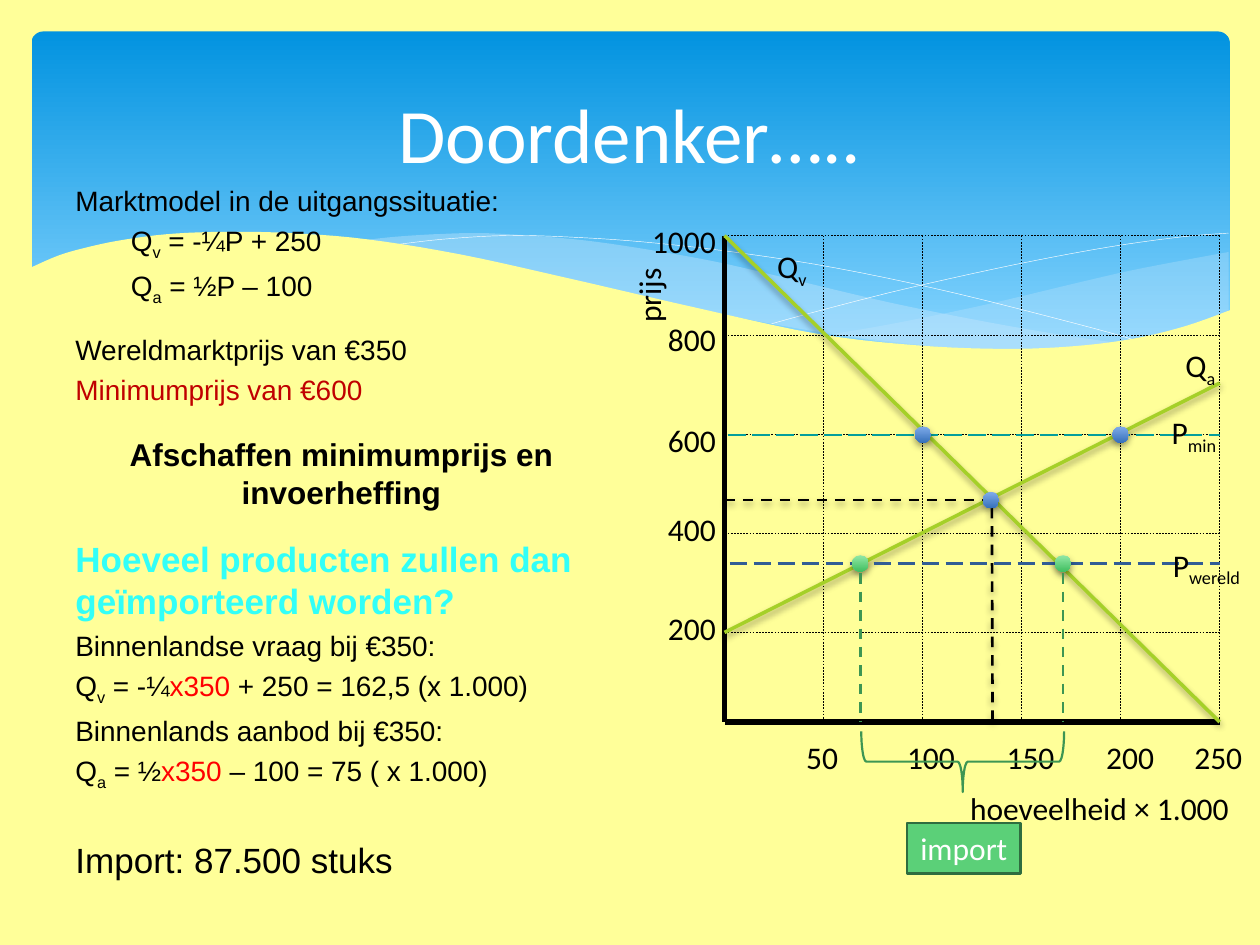
from lxml import etree
from pptx import Presentation, util as u
from pptx.dml.color import RGBColor
from pptx.enum import dml, shapes as sh, text as tx
from pptx.oxml.ns import qn

Pt = u.Pt
PAPER = RGBColor(0xFF, 0xFF, 0x99)
WHITE = RGBColor(0xFF, 0xFF, 0xFF)
BLACK = RGBColor(0, 0, 0)
DARK_RED = RGBColor(0xC0, 0, 0)
RED = RGBColor(0xFF, 0, 0)
CYAN = RGBColor(0x32, 0xFF, 0xF8)
MIST = RGBColor(0xC6, 0xE7, 0xFC)
SKY = (RGBColor(0x02, 0x93, 0xE0), RGBColor(0x83, 0xD3, 0xFE))
BLUE_DOT = (RGBColor(0x80, 0xAC, 0xEA), RGBColor(0x35, 0x70, 0xBA))
GREEN_DOT = (RGBColor(0x92, 0xE8, 0xA6), RGBColor(0x41, 0xBF, 0x60))
LIME = RGBColor(0xA5, 0xD0, 0x28)
TEAL = RGBColor(0x04, 0x9E, 0x9B)
NAVY = RGBColor(0x31, 0x5D, 0x95)
GREEN = RGBColor(0x3D, 0x96, 0x53)
IMPORT_FILL = RGBColor(0x5B, 0xD0, 0x78)
IMPORT_EDGE = RGBColor(0x2F, 0x6D, 0x3F)
DASH, LONG_DASH = dml.MSO_LINE.DASH, dml.MSO_LINE.LONG_DASH

# Graph frame and the prices and crossings marked in it
LEFT, RIGHT, TOP, BOTTOM = 414, 697, 134.6, 412.6
STEP_X, STEP_Y = 56.6, 56.7
MIN_Y, WORLD_Y = 248.4, 322
BALANCE = (566.3, 285.8)
SUPPLY_X, DEMAND_X = 491.6, 607.5

# Wave outlines
RIGHT_WAVE = [(702, 144), (652, 153.4), (620, 160.6), (561, 174.6), (508, 185.4), (476, 190.8)]
RIGHT_WAVE_BACK = [(476, 190.8), (527, 197.3), (561, 199.4), (592, 199.4), (621, 197.4),
                   (646, 194.4), (668, 190.8), (683, 185.4), (702, 177.8)]
MIDDLE_WAVE = [(643, 196.6), (603, 190.8), (558, 182.9), (508, 172.8), (453, 159.8),
               (410, 149.8), (370, 142.6), (335, 137.5), (302, 134.6), (274, 133.2),
               (248, 133.9), (225, 135.4), (206, 137.5)]
MIDDLE_WAVE_BACK = [(206, 137.5), (246, 143.3), (291, 151.9), (323, 159.8), (382, 172.8),
                    (433, 183.6), (479, 191.5), (520, 197.3), (557, 199.6), (589, 200.2),
                    (617, 199.4), (643, 196.6)]
FRONT_WAVE = [(703.4, 177.1), (677, 186.5), (647, 193.7), (612, 198), (572, 199.4),
              (523, 197.3), (467, 190.8), (400, 176.4), (322, 158.4), (263, 145.4),
              (210, 136.8), (166, 133.2), (127, 132.5), (95, 133.9), (68, 137.5),
              (48, 141.8), (33, 146.2), (16.6, 153.4)]
FALLING_THREAD = [(222, 140.4), (252, 136.8), (289, 134.6), (324, 135.4), (367, 138.2),
                  (419, 144), (479, 153.4), (547, 167.8), (626, 187.9), (653, 195.8)]
RISING_THREAD = [(441, 185), (470, 177.1), (518, 164.9), (580, 151.2), (634, 141.1),
                 (675, 135.4), (702, 133.2)]

# Body lines: runs, size, colour, bold, gap above, indent, alignment
BODY = [
    ([("Marktmodel in de uitgangssituatie:",)], {}),
    ([("Q",), ("v", "sub"), (" = -¼P + 250",)], {"indent": 31.7}),
    ([("Q",), ("a", "sub"), (" = ½P – 100",)], {"indent": 31.7}),
    ([("Wereldmarktprijs van €350",)], {"gap": 11}),
    ([("Minimumprijs van €600",)], {"color": DARK_RED}),
    ([("Afschaffen minimumprijs en invoerheffing",)],
     {"size": 18, "bold": True, "gap": 12.4, "align": tx.PP_ALIGN.CENTER}),
    ([("Hoeveel producten zullen dan geïmporteerd worden?",)],
     {"size": 20, "bold": True, "gap": 11, "color": CYAN}),
    ([("Binnenlandse vraag bij €350:",)], {}),
    ([("Q",), ("v", "sub"), (" = -¼",), ("x350 ", "red"), ("+ 250 = 162,5 (x 1.000)",)], {}),
    ([("Binnenlands aanbod bij €350:",)], {}),
    ([("Q",), ("a", "sub"), (" = ½",), ("x350 ", "red"), ("– 100 = 75 ( x 1.000)",)], {}),
    ([("Import: 87.500 stuks",)], {"size": 20, "gap": 22}),
]


def smooth(points, steps=5):
    """Catmull-Rom curve through the points."""
    ends = [points[0], *points, points[-1]]
    curve = [points[0]]
    for a, b, c, d in zip(ends, ends[1:], ends[2:], ends[3:]):
        for t in (i / steps for i in range(1, steps + 1)):
            curve.append(tuple(
                (2 * q + (r - p) * t + (2 * p - 5 * q + 4 * r - s) * t ** 2
                 + (3 * q - p - 3 * r + s) * t ** 3) / 2
                for p, q, r, s in zip(a, b, c, d)))
    return curve


def add_outline(slide, points, color, opacity=100, closed=True):
    spots = [(Pt(x), Pt(y)) for x, y in points]
    builder = slide.shapes.build_freeform(*spots[0], scale=1.0)
    builder.add_line_segments(spots[1:], close=closed)
    wave = builder.convert_to_shape()
    wave.shadow.inherit = False
    if not closed:
        wave.fill.background()
        wave.line.color.rgb, wave.line.width = color, Pt(0.25)
        return
    wave.line.fill.background()
    wave.fill.solid()
    wave.fill.fore_color.rgb = color
    if opacity < 100:
        tint = wave._element.spPr.find(qn("a:solidFill"))[0]
        etree.SubElement(tint, qn("a:alpha"), val=str(opacity * 1000))


def set_shadow(shape, visible):
    effects = etree.SubElement(shape._element.spPr, qn("a:effectLst"))
    if visible:
        outer = etree.SubElement(effects, qn("a:outerShdw"), blurRad=str(Pt(4)),
                                 dist=str(Pt(2)), dir="5400000", rotWithShape="0")
        shade = etree.SubElement(outer, qn("a:srgbClr"), val="000000")
        etree.SubElement(shade, qn("a:alpha"), val="38000")


def add_line(slide, start, end, color, width, dash=None, shadow=False):
    line = slide.shapes.add_connector(sh.MSO_CONNECTOR.STRAIGHT, *map(Pt, (*start, *end)))
    line.line.color.rgb, line.line.width = color, Pt(width)
    if dash:
        line.line.dash_style = dash
    set_shadow(line, shadow)


def add_preset(slide, kind, left, top, width, height):
    shape = slide.shapes.add_shape(kind, Pt(left), Pt(top), Pt(width), Pt(height))
    shape.line.fill.background()
    return shape


def fill_gradient(shape, colors, end=1.0):
    shape.fill.gradient()
    shape.fill.gradient_angle = 270
    for stop, color, position in zip(shape.fill.gradient_stops, colors, (0, end)):
        stop.color.rgb, stop.position = color, position


def add_dot(slide, x, y, colors, size=9.4):
    dot = add_preset(slide, sh.MSO_SHAPE.OVAL, x - size / 2, y - size / 2, size, size)
    fill_gradient(dot, colors)
    set_shadow(dot, True)


def add_run(paragraph, words, size, color, font, bold=False, role=None):
    run = paragraph.add_run()
    run.text = words
    run.font.size, run.font.name, run.font.bold = Pt(size), font, bold
    run.font.color.rgb = RED if role == "red" else color
    if role == "sub":
        run.font._element.set("baseline", "-25000")


def add_label(slide, words, left, top, width, sub="", rotation=0):
    label = slide.shapes.add_textbox(Pt(left), Pt(top), Pt(width), Pt(29))
    label.rotation = rotation
    label.text_frame.word_wrap = False
    label.text_frame.auto_size = tx.MSO_AUTO_SIZE.SHAPE_TO_FIT_TEXT
    paragraph = label.text_frame.paragraphs[0]
    add_run(paragraph, words, 18, BLACK, "Calibri")
    if sub:
        add_run(paragraph, sub, 18, BLACK, "Calibri", role="sub")


def add_banner(slide):
    sky = add_preset(slide, sh.MSO_SHAPE.ROUNDED_RECTANGLE, 18, 18, 684.7, 194.4)
    sky.adjustments[0] = 0.034
    sky.shadow.inherit = False
    fill_gradient(sky, SKY, 0.9)
    add_outline(slide, smooth(RIGHT_WAVE) + smooth(RIGHT_WAVE_BACK), MIST, 29)
    add_outline(slide, smooth(MIDDLE_WAVE) + smooth(MIDDLE_WAVE_BACK), MIST, 40)
    for thread in (FALLING_THREAD, RISING_THREAD):
        add_outline(slide, smooth(thread), WHITE, closed=False)
    add_outline(slide, smooth(FRONT_WAVE) + [(16.6, 236.9), (703.4, 236.9)], PAPER)


def add_title(slide):
    title = slide.shapes.title
    slide.shapes._spTree.append(title._element)  # in front of the banner
    title.left, title.top, title.width, title.height = map(Pt, (36, 26.6, 648, 98.6))
    title.text_frame.text = "Doordenker….."
    title.text_frame.vertical_anchor = tx.MSO_ANCHOR.MIDDLE
    heading = title.text_frame.paragraphs[0]
    heading.alignment = tx.PP_ALIGN.CENTER
    font = heading.runs[0].font
    font.size, font.name, font.color.rgb = Pt(44), "Calibri", WHITE


def add_body(slide):
    frame = slide.shapes.add_textbox(Pt(36), Pt(101.5), Pt(318.2), Pt(405.4)).text_frame
    frame.word_wrap = True
    for i, (runs, style) in enumerate(BODY):
        line = frame.add_paragraph() if i else frame.paragraphs[0]
        size = style.get("size", 16)
        line.space_before = Pt(round(size * 0.23 + style.get("gap", 0), 1))
        line.alignment = style.get("align", tx.PP_ALIGN.LEFT)
        if "indent" in style:
            line._p.get_or_add_pPr().set("marL", str(Pt(style["indent"])))
        for words, *role in runs:
            add_run(line, words, size, style.get("color", BLACK), "Arial",
                    style.get("bold", False), *role)


def add_axes(slide):
    add_line(slide, (LEFT, TOP), (LEFT, BOTTOM), BLACK, 3)
    add_line(slide, (RIGHT, BOTTOM), (LEFT, BOTTOM), BLACK, 3)
    for i in range(5):
        y, x = TOP + i * STEP_Y, LEFT + (i + 1) * STEP_X
        add_line(slide, (LEFT, y), (RIGHT, y), BLACK, 0.25, DASH)
        add_line(slide, (x, TOP), (x, BOTTOM), BLACK, 0.25, DASH)
    add_label(slide, "hoeveelheid × 1.000", 547.2, 447.1, 164.2)
    add_label(slide, "prijs", 347.8, 154.1, 46, rotation=270)
    for price, top in zip(range(200, 1001, 200), (344.2, 288, 236.9, 179.3, 123.1)):
        width = 15 + 9.1 * len(str(price))
        add_label(slide, str(price), 416.9 - width, top, width)
    for amount, centre in zip(range(50, 251, 50), (470.2, 532.4, 589.3, 646.2, 696.6)):
        width = 15 + 9.1 * len(str(amount))
        add_label(slide, str(amount), centre - width / 2, 418.3, width)


def add_market(slide):
    # Demand, supply and their balance
    add_line(slide, (LEFT, TOP), (RIGHT, BOTTOM), LIME, 2, shadow=True)
    add_label(slide, "Q", 437, 137.5, 32.4, "v")
    add_line(slide, (LEFT, 361.4), (RIGHT, 218.9), LIME, 2, shadow=True)
    add_label(slide, "Q", 670.3, 194.4, 32.4, "a")
    add_line(slide, (LEFT, 285.8), (561.6, 285.8), BLACK, 1.5, DASH, True)
    add_line(slide, (566.8, 290.2), (567.2, BOTTOM), BLACK, 1.5, DASH, True)
    add_dot(slide, *BALANCE, BLUE_DOT)
    # Minimum price
    add_line(slide, (416.2, MIN_Y), (RIGHT, MIN_Y), TEAL, 1.25, LONG_DASH)
    add_label(slide, "P", 662.4, 232.6, 42.5, "min")
    for x in (527.4, 640.4):
        add_dot(slide, x, MIN_Y, BLUE_DOT)
    # World price
    add_line(slide, (416.9, WORLD_Y), (RIGHT, WORLD_Y), NAVY, 1.25, LONG_DASH)
    add_label(slide, "P", 663.1, 308.2, 57.6, "wereld")
    for x in (SUPPLY_X, DEMAND_X):
        add_dot(slide, x, WORLD_Y, GREEN_DOT)
        add_line(slide, (x, 327.6), (x, BOTTOM), GREEN, 1.5, DASH)


def add_import(slide):
    brace = add_preset(slide, sh.MSO_SHAPE.RIGHT_BRACE, 532.8, 377.3, 34.6, 115.9)
    brace.rotation = 90
    brace.shadow.inherit = False
    brace.fill.background()
    brace.line.color.rgb, brace.line.width = GREEN, Pt(1.25)
    tag = add_preset(slide, sh.MSO_SHAPE.RECTANGLE, 518.4, 470.2, 64.8, 29)
    tag.shadow.inherit = False
    tag.fill.solid()
    tag.fill.fore_color.rgb = IMPORT_FILL
    tag.line.color.rgb, tag.line.width = IMPORT_EDGE, Pt(1.25)
    tag.text_frame.word_wrap = False
    add_run(tag.text_frame.paragraphs[0], "import", 18, WHITE, "Calibri")


def main():
    deck = Presentation()
    deck.slide_width, deck.slide_height = Pt(720), Pt(540)
    slide = deck.slides.add_slide(deck.slide_layouts[5])
    slide.background.fill.solid()
    slide.background.fill.fore_color.rgb = PAPER
    for build in (add_banner, add_title, add_body, add_axes, add_market, add_import):
        build(slide)
    deck.save("out.pptx")


if __name__ == "__main__":
    main()
